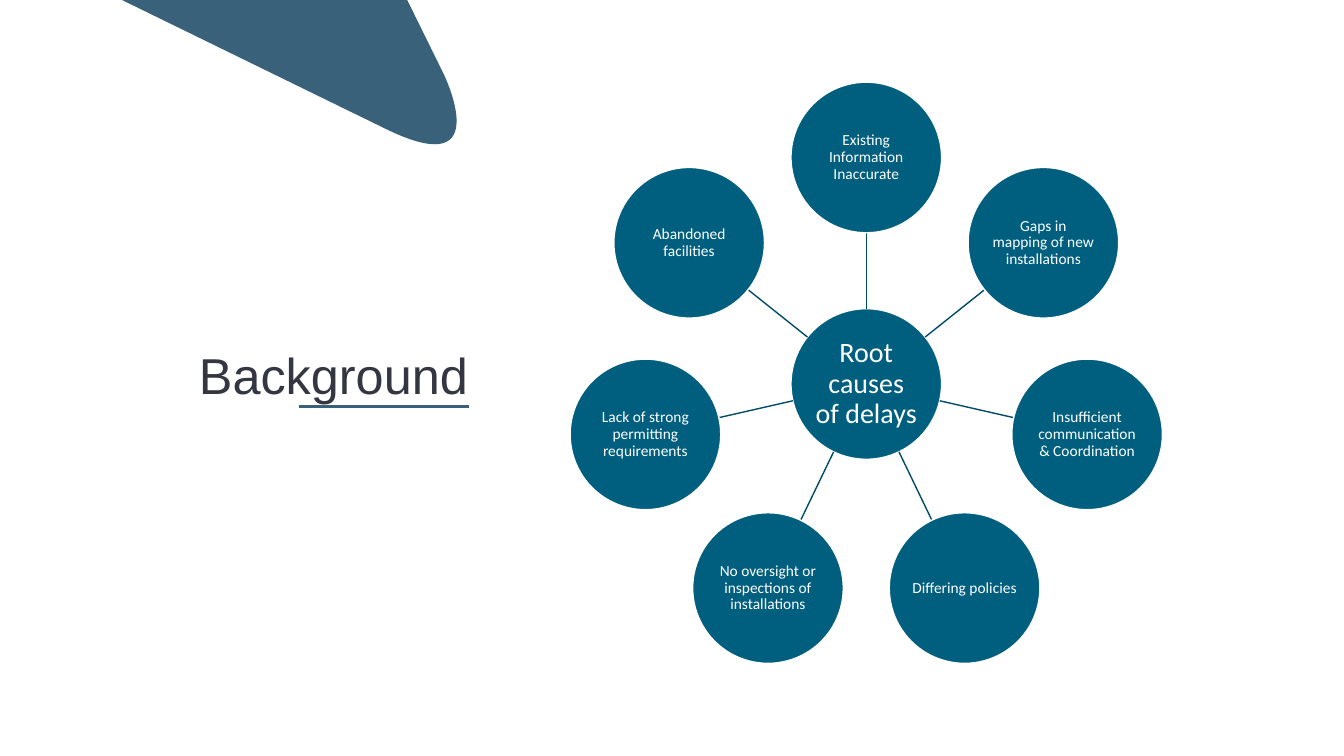
from dataclasses import dataclass
from math import cos, pi, sin

from lxml import etree
from pptx import Presentation
from pptx.dml.color import RGBColor
from pptx.enum import shapes, text
from pptx.oxml import ns
from pptx.util import Pt

WHITE = RGBColor(0xFF, 0xFF, 0xFF)
CHARCOAL = RGBColor(0x34, 0x37, 0x41)
SLATE = RGBColor(0x3A, 0x61, 0x7A)
TEAL = RGBColor(0x00, 0x5F, 0x7F)
DEEP_TEAL = RGBColor(0x00, 0x4C, 0x66)

HUB_X, HUB_Y = 618.8, 274.3
ORBIT = 161.8
RADIUS = 53.8


@dataclass(frozen=True)
class Topic:
    label: str
    x: float
    y: float
    size: float = 11


def write_text(frame, label: str, *, font: str, size: float, color: RGBColor,
               align: text.PP_ALIGN, inset: float) -> None:
    frame.word_wrap = True
    frame.vertical_anchor = text.MSO_ANCHOR.MIDDLE
    frame.margin_left = frame.margin_right = Pt(inset)
    frame.margin_top = frame.margin_bottom = Pt(inset)
    paragraph = frame.paragraphs[0]
    paragraph.alignment = align
    paragraph.line_spacing = 0.9
    run = paragraph.add_run()
    run.text = label
    run.font.name = font
    run.font.size = Pt(size)
    run.font.color.rgb = color


def draw_line(slide, start: tuple[float, float], end: tuple[float, float],
              color: RGBColor, width: float) -> None:
    line = slide.shapes.add_connector(
        shapes.MSO_CONNECTOR.STRAIGHT, *(Pt(v) for v in (*start, *end)))
    line.line.color.rgb = color
    line.line.width = Pt(width)
    etree.SubElement(line._element.spPr, ns.qn("a:effectLst"))


def draw_topic(slide, topic: Topic) -> None:
    circle = slide.shapes.add_shape(
        shapes.MSO_SHAPE.OVAL, Pt(topic.x - RADIUS), Pt(topic.y - RADIUS),
        Pt(2 * RADIUS), Pt(2 * RADIUS))
    circle.shadow.inherit = False
    circle.fill.solid()
    circle.fill.fore_color.rgb = TEAL
    circle.line.color.rgb = WHITE
    circle.line.width = Pt(1)
    write_text(circle.text_frame, topic.label, font="Calibri", size=topic.size,
               color=WHITE, align=text.PP_ALIGN.CENTER, inset=0.7)


def draw_corner(slide) -> None:
    start, control, end = (277.2, 92.9), (355, 130.3), (316.8, 52.6)
    steps = 40
    curve = []
    for step in range(1, steps + 1):
        t = step / steps
        a, b, c = (1 - t) ** 3, 3 * t * (1 - t) ** 2, 3 * t * t * (1 - t) + t ** 3
        curve.append(tuple(a * p + b * q + c * r
                           for p, q, r in zip(start, control, end)))
    outline = [(87.1, 0), start, *curve]
    builder = slide.shapes.build_freeform(Pt(290.9), 0)
    builder.add_line_segments([(Pt(x), Pt(y)) for x, y in outline], close=True)
    corner = builder.convert_to_shape()
    corner.shadow.inherit = False
    corner.fill.solid()
    corner.fill.fore_color.rgb = SLATE
    corner.line.fill.background()


def draw_causes(slide) -> None:
    causes = (
        "Existing Information Inaccurate",
        "Gaps in mapping of new installations",
        "Insufficient communication & Coordination",
        "Differing policies",
        "No oversight or inspections of installations",
        "Lack of strong permitting requirements",
        "Abandoned facilities",
    )
    draw_topic(slide, Topic("Root causes of delays", HUB_X, HUB_Y, 20))
    for index, cause in enumerate(causes):
        angle = 2 * pi * index / len(causes)
        inner, outer, center = (
            (HUB_X + reach * sin(angle), HUB_Y - reach * cos(angle))
            for reach in (RADIUS, ORBIT - RADIUS, ORBIT))
        draw_line(slide, inner, outer, DEEP_TEAL, 1)
        draw_topic(slide, Topic(cause, *center))


def main() -> None:
    deck = Presentation()
    deck.slide_width, deck.slide_height = Pt(960), Pt(540)
    slide = deck.slides.add_slide(deck.slide_layouts[6])
    title = slide.shapes.add_textbox(Pt(34.6), 0, Pt(306.7), Pt(540))
    write_text(title.text_frame, "Background", font="Arial", size=36,
               color=CHARCOAL, align=text.PP_ALIGN.RIGHT, inset=7.2)
    draw_line(slide, (335.2, 290.2), (213.8, 290.2), SLATE, 2.25)
    draw_corner(slide)
    draw_causes(slide)
    deck.save("out.pptx")


if __name__ == "__main__":
    main()
